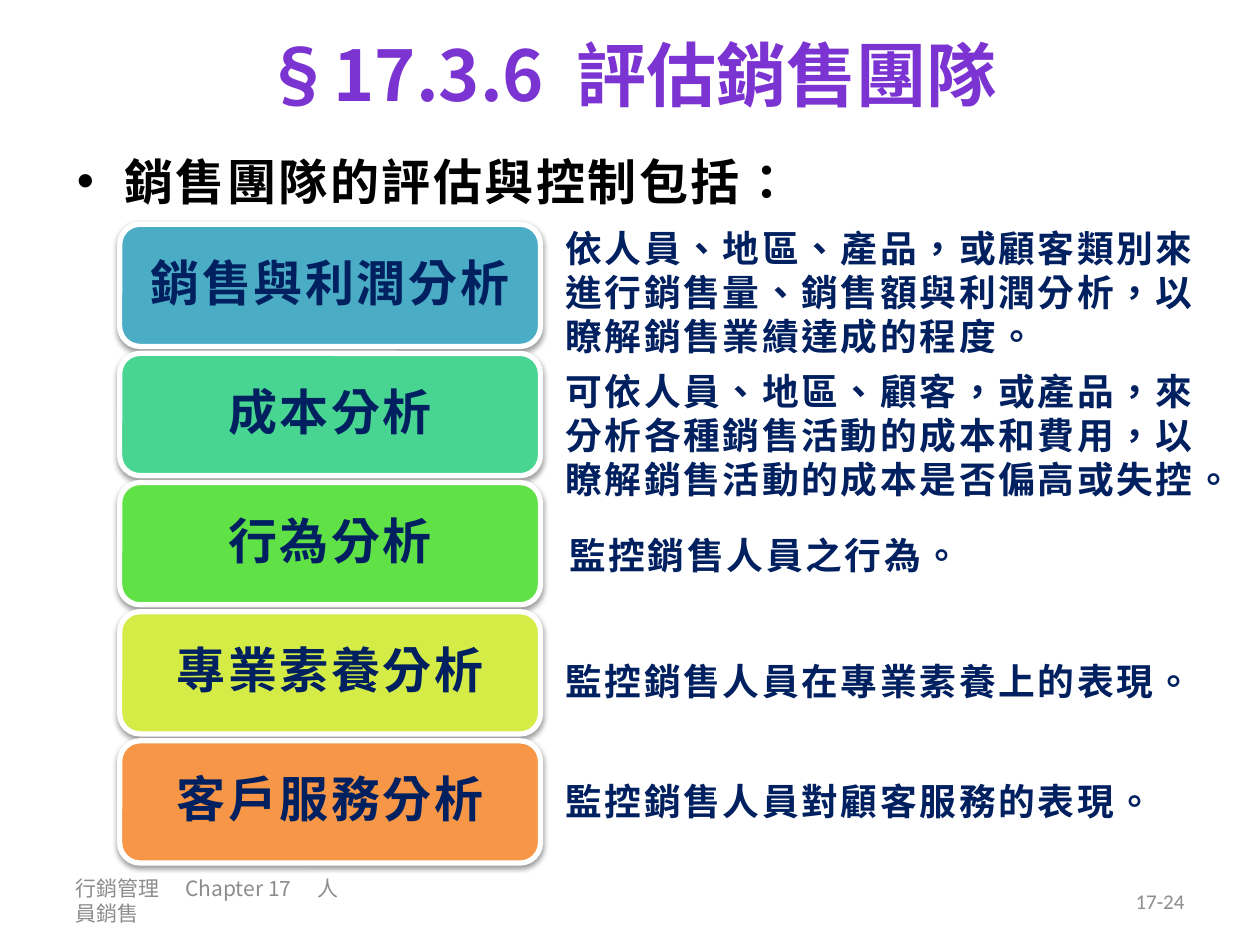
from dataclasses import dataclass

from lxml.etree import SubElement
from pptx import Presentation
from pptx.dml.color import RGBColor
from pptx.enum.shapes import MSO_SHAPE
from pptx.enum.text import MSO_ANCHOR, PP_ALIGN
from pptx.oxml.ns import qn
from pptx.util import Inches, Pt

COLORS = {
    "title": "7B34D2", "black": "000000", "white": "FFFFFF", "navy": "002060",
    "gray": "8C8C8C", "blue": "4BACC6", "green": "48D491", "lime": "60E146",
    "yellow": "D5EC46", "orange": "F79646",
}
LATIN_FONT = "Calibri"
CJK_FONT = "Noto Sans CJK SC"
FIRST_CARD_TOP, LAST_CARD_TOP = 1.78, 5.88


@dataclass
class Style:
    size: int
    color: str
    bold: bool = True
    spacing: float = 0
    font: str = LATIN_FONT


@dataclass
class Place:
    left: float
    top: float
    width: float
    height: float

    def lengths(self) -> tuple:
        return tuple(Inches(v) for v in (self.left, self.top, self.width, self.height))


@dataclass
class Analysis:
    name: str
    color: str
    description: str
    place: Place
    wrap: bool = False


TITLE = Style(40, "title")
TITLE_NUMBER = Style(40, "title", font=CJK_FONT)
LEAD = Style(28, "black", spacing=1.5)
CARD = Style(28, "navy", spacing=1.5)
DESCRIPTION = Style(21, "navy", spacing=1.5)
FOOTER = Style(12, "gray", bold=False, font=CJK_FONT)
PAGE_NUMBER = Style(12, "gray", bold=False)

ANALYSES = [
    Analysis("銷售與利潤分析", "blue",
             "依人員、地區、產品，或顧客類別來進行銷售量、銷售額與利潤分析，以瞭解銷售業績達成的程度。",
             Place(4.39, 1.74, 5.44, 1.16), wrap=True),
    Analysis("成本分析", "green",
             "可依人員、地區、顧客，或產品，來分析各種銷售活動的成本和費用，以瞭解銷售活動的成本是否偏高或失控。",
             Place(4.39, 2.88, 5.44, 1.16), wrap=True),
    Analysis("行為分析", "lime", "監控銷售人員之行為。", Place(4.42, 4.18, 3.36, 0.45)),
    Analysis("專業素養分析", "yellow", "監控銷售人員在專業素養上的表現。",
             Place(4.39, 5.18, 5.25, 0.45)),
    Analysis("客戶服務分析", "orange", "監控銷售人員對顧客服務的表現。",
             Place(4.39, 6.13, 4.94, 0.45)),
]


def rgb(name: str) -> RGBColor:
    return RGBColor.from_string(COLORS[name])


def add_span(para, text: str, style: Style) -> None:
    span = para.add_run()
    span.text = text
    font = span.font
    font.size, font.bold, font.name = Pt(style.size), style.bold, style.font
    font.color.rgb = rgb(style.color)
    properties = span._r.get_or_add_rPr()
    properties.set("lang", "zh-TW")
    if style.spacing:
        properties.set("spc", str(int(style.spacing * 100)))
    east_asian = SubElement(properties, qn("a:ea"))
    east_asian.set("typeface", CJK_FONT)


def add_text(page, place: Place, text: str, style: Style, wrap: bool = True,
             anchor=MSO_ANCHOR.TOP, align=PP_ALIGN.LEFT) -> None:
    box = page.shapes.add_textbox(*place.lengths())
    frame = box.text_frame
    frame.word_wrap, frame.vertical_anchor = wrap, anchor
    para = frame.paragraphs[0]
    para.alignment = align
    add_span(para, text, style)


def fill_placeholder(holder, place: Place, anchor, spans: list) -> None:
    holder.left, holder.top, holder.width, holder.height = place.lengths()
    holder.text_frame.vertical_anchor = anchor
    para = holder.text_frame.paragraphs[0]
    para.space_before = Pt(0)
    for text, style in spans:
        add_span(para, text, style)


def add_soft_shadow(shape) -> None:
    shape.shadow.inherit = False
    effects = shape._element.spPr.find(qn("a:effectLst"))
    shadow = SubElement(effects, qn("a:outerShdw"), blurRad=str(Pt(3.1)),
                        dist=str(Pt(1.6)), dir="5400000", rotWithShape="0")
    color = SubElement(shadow, qn("a:srgbClr"), val=COLORS["black"])
    SubElement(color, qn("a:alpha"), val="38000")


def add_card(page, analysis: Analysis, top: float) -> None:
    card = page.shapes.add_shape(MSO_SHAPE.ROUNDED_RECTANGLE,
                                 *Place(0.95, top, 3.34, 0.97).lengths())
    card.fill.solid()
    card.fill.fore_color.rgb = rgb(analysis.color)
    card.line.color.rgb = rgb("white")
    card.line.width = Pt(3)
    add_soft_shadow(card)
    frame = card.text_frame
    frame.word_wrap, frame.vertical_anchor = True, MSO_ANCHOR.MIDDLE
    frame.margin_left = frame.margin_right = Inches(0.12)
    frame.margin_top = frame.margin_bottom = Inches(0.06)
    para = frame.paragraphs[0]
    para.alignment, para.line_spacing = PP_ALIGN.CENTER, 0.9
    add_span(para, analysis.name, CARD)


def main() -> None:
    deck = Presentation()
    deck.slide_width, deck.slide_height = Inches(10), Inches(7.5)
    page = deck.slides.add_slide(deck.slide_layouts[1])

    fill_placeholder(page.shapes.title, Place(0.5, 0, 9, 1.16), MSO_ANCHOR.MIDDLE,
                     [("§17.3.6 評估", TITLE_NUMBER), ("銷售團隊", TITLE)])
    fill_placeholder(page.placeholders[1], Place(0.51, 1.15, 9, 1.1), MSO_ANCHOR.TOP,
                     [("銷售團隊的評估與控制包括：", LEAD)])

    pitch = (LAST_CARD_TOP - FIRST_CARD_TOP) / (len(ANALYSES) - 1)
    for index, analysis in enumerate(ANALYSES):
        add_card(page, analysis, FIRST_CARD_TOP + index * pitch)
        add_text(page, analysis.place, analysis.description, DESCRIPTION, analysis.wrap)

    add_text(page, Place(0.5, 6.95, 2.45, 0.4), "行銷管理　Chapter 17　人員銷售",
             FOOTER, anchor=MSO_ANCHOR.MIDDLE)
    add_text(page, Place(7.17, 6.95, 2.33, 0.4), "17-24", PAGE_NUMBER,
             anchor=MSO_ANCHOR.MIDDLE, align=PP_ALIGN.RIGHT)
    deck.save("out.pptx")


if __name__ == "__main__":
    main()
